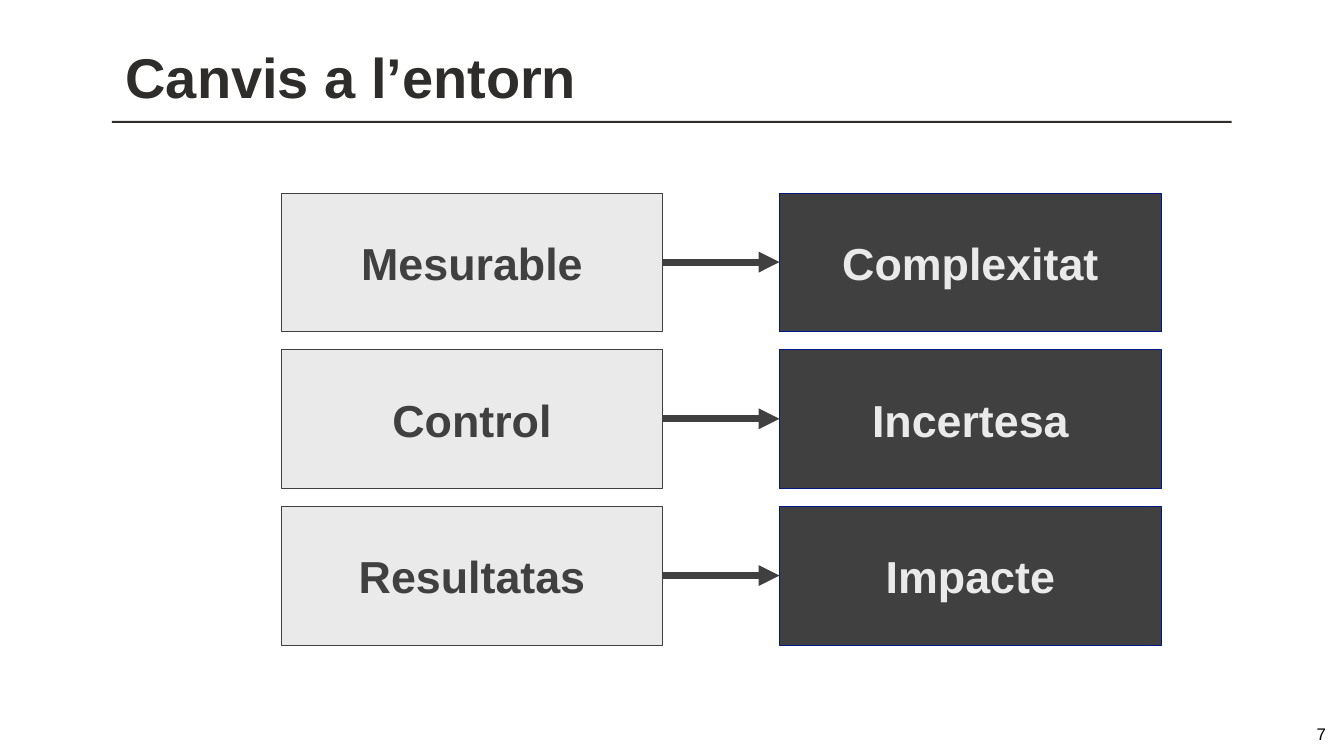
from dataclasses import dataclass

from lxml import etree
from pptx import Presentation
from pptx.dml.color import RGBColor
from pptx.enum.shapes import MSO_CONNECTOR, MSO_SHAPE
from pptx.enum.text import MSO_ANCHOR, MSO_AUTO_SIZE, PP_ALIGN
from pptx.oxml.ns import qn
from pptx.util import Pt

RECT = MSO_SHAPE.RECTANGLE
STRAIGHT = MSO_CONNECTOR.STRAIGHT
MIDDLE, BOTTOM = MSO_ANCHOR.MIDDLE, MSO_ANCHOR.BOTTOM
LEFT, CENTER, RIGHT = PP_ALIGN.LEFT, PP_ALIGN.CENTER, PP_ALIGN.RIGHT
FIXED = MSO_AUTO_SIZE.NONE
SCALE = 9144


@dataclass(frozen=True)
class Theme:
    font: str = "Arial"
    ink: str = "2E2D2C"
    dark: str = "404040"
    light: str = "EAEAEA"
    edge: str = "001789"
    black: str = "000000"
    title: int = 80
    label: int = 64
    number: int = 24
    thin: int = 1
    thick: int = 10


THEME = Theme()
PAIRS = [
    ("Mesurable", "Complexitat"),
    ("Control", "Incertesa"),
    ("Resultatas", "Impacte"),
]


def px(*sizes):
    return [size * SCALE for size in sizes]


def rgb(code):
    return RGBColor.from_string(code)


def write(shape, text, size, color, align, anchor, pad=(10, 5), bold=True):
    frame = shape.text_frame
    frame.text = text
    frame.auto_size = FIXED
    frame.word_wrap = True
    frame.vertical_anchor = anchor
    side, edge = px(*pad)
    frame.margin_left = frame.margin_right = side
    frame.margin_top = frame.margin_bottom = edge
    line = frame.paragraphs[0]
    line.alignment = align
    font = line.runs[0].font
    font.name = THEME.font
    font.size = Pt(size)
    font.bold = bold
    font.color.rgb = rgb(color)


def add_rect(slide, box, fill, edge=None):
    shape = slide.shapes.add_shape(RECT, *px(*box))
    shape.shadow.inherit = False
    shape.fill.solid()
    shape.fill.fore_color.rgb = rgb(fill)
    if edge:
        shape.line.color.rgb = rgb(edge)
        shape.line.width = Pt(THEME.thin)
    else:
        shape.line.fill.background()
    return shape


def add_arrow(slide, start, end, y):
    arrow = slide.shapes.add_connector(STRAIGHT, *px(start, y, end, y))
    arrow.line.color.rgb = rgb(THEME.dark)
    arrow.line.width = Pt(THEME.thick)
    etree.SubElement(arrow.line._get_or_add_ln(), qn("a:tailEnd"), type="triangle")
    etree.SubElement(arrow._element.spPr, qn("a:effectLst"))


def add_header(slide, box, text):
    left, top, width, height = box
    title = slide.shapes.title
    title.left, title.top, title.width, title.height = px(*box)
    write(title, text, THEME.title, THEME.ink, LEFT, BOTTOM, (27, 13))
    add_rect(slide, (left, top + height + 10, width, 4), THEME.ink)


def add_pairs(slide, box, pairs):
    left, top, width, height = box
    wide, gap = 757, 36
    tall = (height - gap * (len(pairs) - 1)) // len(pairs)
    right = left + width - wide
    for row, (old, new) in enumerate(pairs):
        y = top + row * (tall + gap)
        cells = [
            (left, old, THEME.light, THEME.dark, THEME.dark),
            (right, new, THEME.dark, THEME.edge, THEME.light),
        ]
        for x, text, fill, edge, color in cells:
            shape = add_rect(slide, (x, y, wide, tall), fill, edge)
            write(shape, text, THEME.label, color, CENTER, MIDDLE)
        add_arrow(slide, left + wide, right, y + tall // 2)


def add_number(slide, box, text):
    shape = slide.shapes.add_textbox(*px(*box))
    write(shape, text, THEME.number, THEME.black, RIGHT, MIDDLE, (10, 10), False)


def main():
    deck = Presentation()
    deck.slide_width, deck.slide_height = px(2667, 1500)
    slide = deck.slides.add_slide(deck.slide_layouts[5])
    add_header(slide, (222, 73, 2222, 157), "Canvis a l’entorn")
    add_pairs(slide, (558, 383, 1746, 897), PAIRS)
    add_number(slide, (2341, 1435, 300, 40), "7")
    deck.save("out.pptx")


if __name__ == "__main__":
    main()
